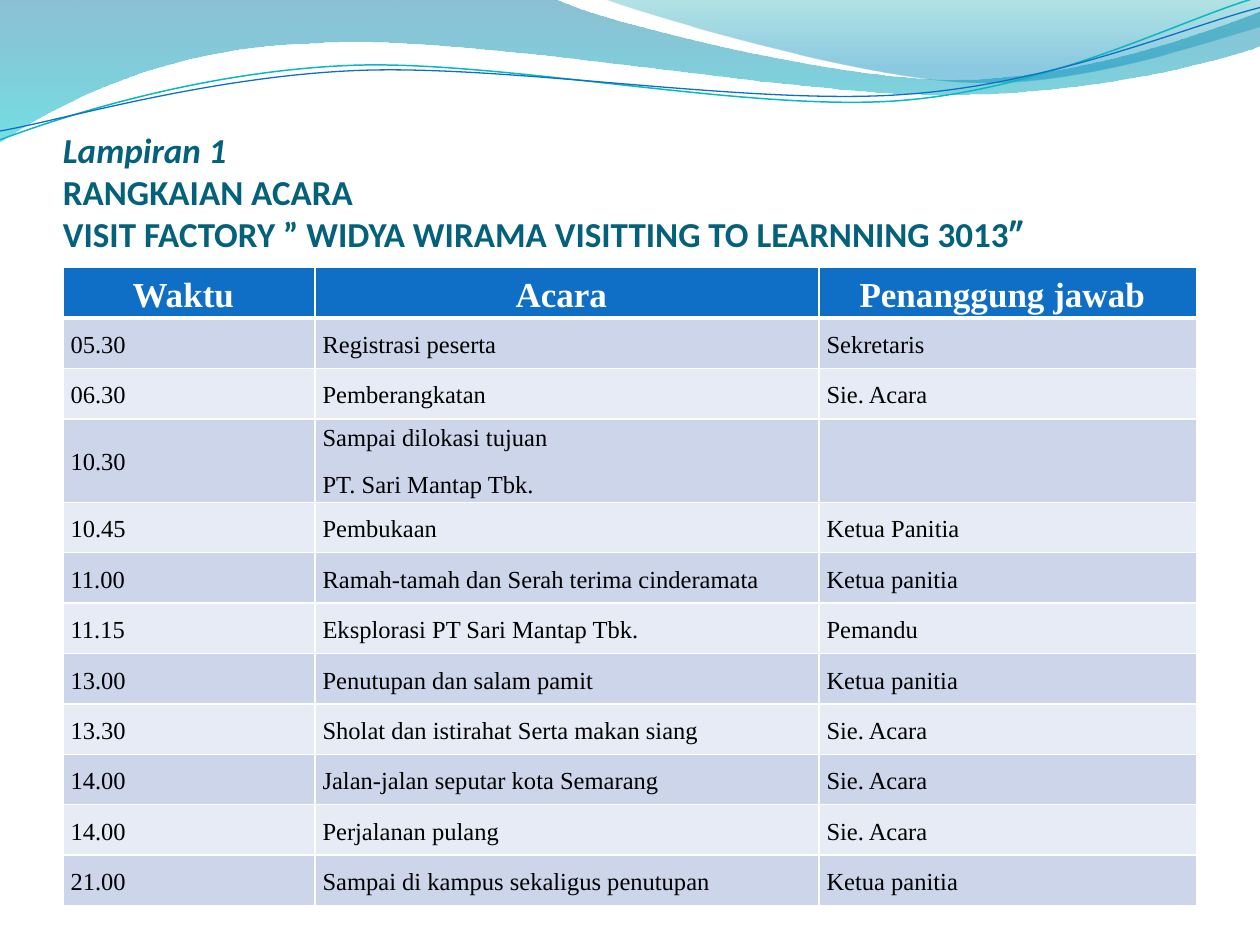
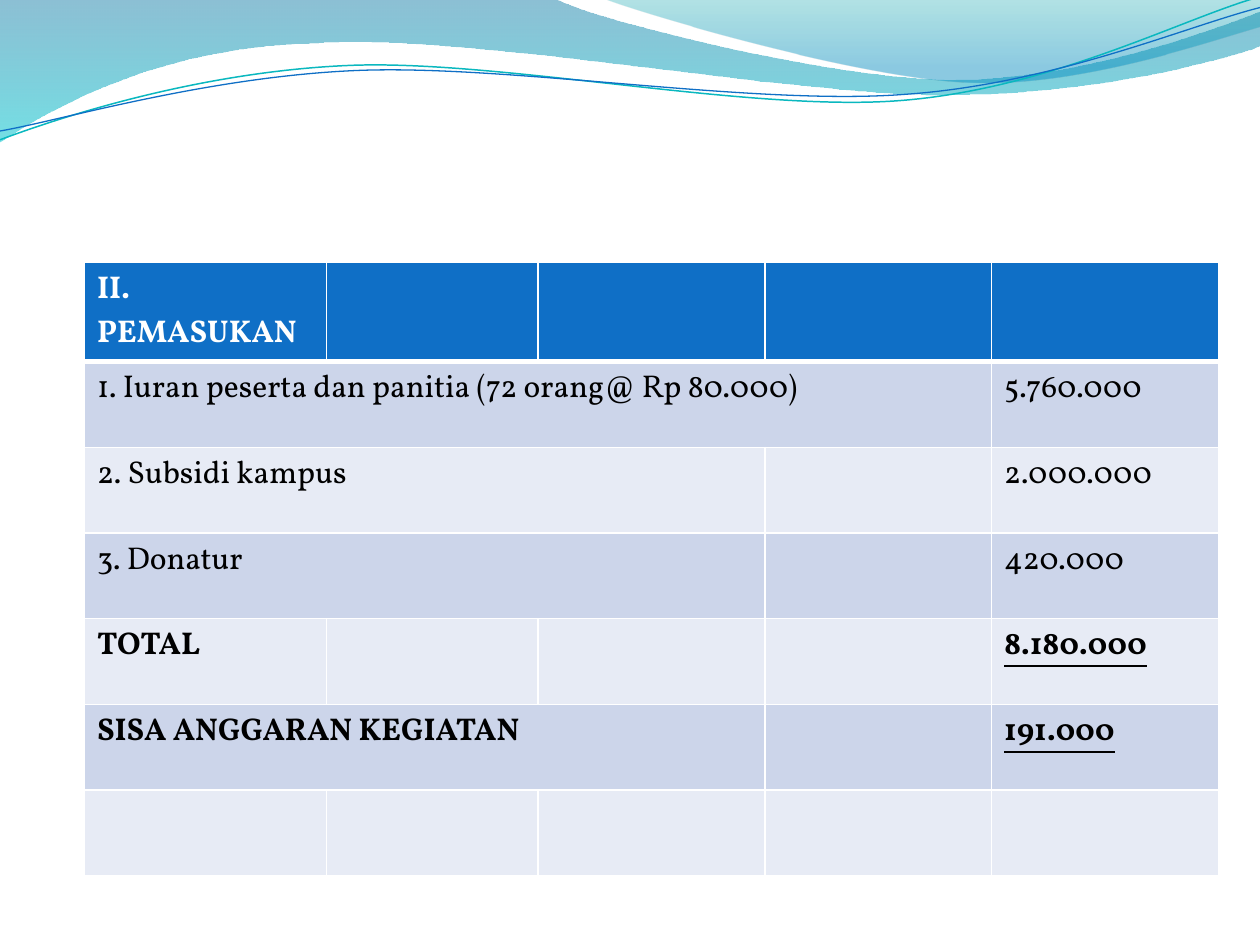
from dataclasses import dataclass

from lxml.etree import SubElement
from pptx import Presentation
from pptx.dml.color import RGBColor as RGB
from pptx.enum.text import MSO_ANCHOR as Anchor, PP_ALIGN as Align
from pptx.oxml import parse_xml
from pptx.oxml.ns import nsdecls, qn
from pptx.util import Inches, Pt


@dataclass(frozen=True)
class Theme:
    title: str = "04617B"
    header: str = "0F6FC6"
    bands: tuple = ("CCD5EA", "E7EBF5")
    white: str = "FFFFFF"
    black: str = "000000"
    wave_teal: str = "0AB8BF"
    title_font: str = "Calibri"
    schedule_font: str = "Times New Roman"
    income_font: str = "Vollkorn"
    title_size: int = 20
    schedule_size: int = 14
    income_size: int = 18
    grid: int = 1
    header_rule: int = 3


T = Theme()

# Each wave is a list of points (2 numbers) and Bézier curves (6 numbers).
# A gradient stop is position, colour, opacity in percent.
BANDS = [
    ([(0, 0), (4.4, -0.01), (4.76, 0.17, 6.64, 0.63, 7.58, 0.63),
      (8.53, 0.63, 9.58, 0.26, 10, 0.09), (10.01, 0.36),
      (9.83, 0.44, 8.7, 0.76, 7.46, 0.75), (6.22, 0.75, 3.82, 0.28, 2.57, 0.34),
      (1.29, 0.36, 0.46, 0.83, -0.01, 1.13)],
     [(0, "0074A1", 45), (1, "00C6CF", 55)]),
    ([(4.79, -0.01), (5.09, 0.11, 6.82, 0.62, 7.69, 0.65),
      (8.56, 0.69, 9.61, 0.32, 10, 0.21), (10, 0)],
     [(0, "00A1A9", 30), (0.8, "008BBF", 45)]),
]
STRANDS = [
    ([(0, 1.11), (0.48, 0.93, 1.58, 0.57, 2.77, 0.52),
      (3.95, 0.47, 5.93, 0.89, 7.13, 0.8), (8.33, 0.71, 9.38, 0.15, 9.98, -0.02)],
     T.wave_teal, 0.85),
    ([(0, 1.04), (0.47, 0.96, 1.64, 0.61, 2.83, 0.56),
      (4.03, 0.51, 5.97, 0.84, 7.17, 0.75), (8.36, 0.67, 9.41, 0.21, 10, 0.06)],
     T.header, 0.75),
]

TITLE = ("Lampiran 1\vRANGKAIAN ACARA\v"
         "VISIT FACTORY ” WIDYA WIRAMA VISITTING TO LEARNNING 3013″")

SCHEDULE = [
    ("Waktu", "Acara", "Penanggung jawab"),
    ("05.30", "Registrasi peserta", "Sekretaris"),
    ("06.30", "Pemberangkatan", "Sie. Acara"),
    ("10.30", "Sampai dilokasi tujuan\nPT. Sari Mantap Tbk.", ""),
    ("10.45", "Pembukaan", "Ketua Panitia"),
    ("11.00", "Ramah-tamah dan Serah terima cinderamata", "Ketua panitia"),
    ("11.15", "Eksplorasi PT Sari Mantap Tbk.", "Pemandu"),
    ("13.00", "Penutupan dan salam pamit", "Ketua panitia"),
    ("13.30", "Sholat dan istirahat Serta makan siang", "Sie. Acara"),
    ("14.00", "Jalan-jalan seputar kota Semarang", "Sie. Acara"),
    ("14.00", "Perjalanan pulang", "Sie. Acara"),
    ("21.00", "Sampai di kampus sekaligus penutupan", "Ketua panitia"),
]

# Label, columns it spans, amount, bold
INCOME = [
    ("II. PEMASUKAN", 1, "", True),
    ("1. Iuran peserta dan panitia (72 orang@ Rp 80.000)", 4, "5.760.000", False),
    ("2. Subsidi kampus", 3, "2.000.000", False),
    ("3. Donatur", 3, "420.000", False),
    ("TOTAL", 1, "8.180.000", True),
    ("SISA ANGGARAN KEGIATAN", 3, "191.000", True),
    ("", 1, "", False),
]


def style_font(font, name, size, color, bold=False):
    font.name, font.size, font.bold = name, Pt(size), bold
    font.color.rgb = RGB.from_string(color)


def add_wave(slide, wave, left, top, close):
    """Draw the wave through its end points, then bend the curved segments."""
    parts = [[(Inches(left + x), Inches(top + y)) for x, y in zip(part[::2], part[1::2])]
             for part in wave]
    ends = [part[-1] for part in parts]
    builder = slide.shapes.build_freeform(*ends[0])
    builder.add_line_segments(ends[1:], close=close)
    sp = builder.convert_to_shape()
    sp.shadow.inherit = False
    segments = list(sp._element.iter(qn("a:lnTo")))
    for segment, points in zip(segments, parts[1:]):
        if len(points) == 3:
            curve = parse_xml(f'<a:cubicBezTo {nsdecls("a")}/>')
            for x, y in points:
                SubElement(curve, qn("a:pt"), x=str(x - sp.left), y=str(y - sp.top))
            segment.getparent().replace(segment, curve)
    return sp


def add_waves(slide, left=0, top=0):
    for wave, stops in BANDS:
        sp = add_wave(slide, wave, left, top, close=True)
        sp.line.fill.background()
        sp.fill.gradient()
        sp.fill.gradient_angle = 270
        for stop, (position, color, _) in zip(sp.fill.gradient_stops, stops):
            stop.position = position
            stop.color.rgb = RGB.from_string(color)
        for clr, (_, _, opacity) in zip(sp._element.spPr.iter(qn("a:srgbClr")), stops):
            SubElement(clr, qn("a:alpha"), val=str(opacity * 1000))
    for wave, color, width in STRANDS:
        sp = add_wave(slide, wave, left, top, close=False)
        sp.fill.background()
        sp.line.color.rgb = RGB.from_string(color)
        sp.line.width = Pt(width)


def add_title(slide, left, top, width, height):
    box = slide.shapes.add_textbox(*map(Inches, (left, top, width, height)))
    tf = box.text_frame
    tf.word_wrap = True
    tf.vertical_anchor = Anchor.BOTTOM
    tf.margin_left = tf.margin_right = tf.margin_bottom = 0
    tf.margin_top = Inches(0.05)
    p = tf.paragraphs[0]
    p.text = TITLE
    for r in p.runs:
        style_font(r.font, T.title_font, T.title_size, T.title, bold=True)
    p.runs[0].font.italic = True


def set_borders(cell, row):
    """White grid, with a thicker rule under the header row."""
    widths = {"L": T.grid, "R": T.grid,
              "T": T.header_rule if row == 1 else T.grid,
              "B": T.header_rule if row == 0 else T.grid}
    tc_pr = cell._tc.get_or_add_tcPr()
    for i, (side, width) in enumerate(widths.items()):
        tc_pr.insert(i, parse_xml(
            f'<a:ln{side} {nsdecls("a")} w="{Pt(width)}"><a:solidFill>'
            f'<a:srgbClr val="{T.white}"/></a:solidFill></a:ln{side}>'))


def add_grid(slide, left, top, columns, heights):
    """Add an empty banded table."""
    frame = slide.shapes.add_table(
        len(heights), len(columns), Inches(left), Inches(top),
        Inches(sum(columns)), Inches(sum(heights)))
    table = frame.table
    for column, width in zip(table.columns, columns):
        column.width = Inches(width)
    for i, (row, height) in enumerate(zip(table.rows, heights)):
        row.height = Inches(height)
        for cell in row.cells:
            cell.fill.solid()
            color = T.bands[(i - 1) % 2] if i else T.header
            cell.fill.fore_color.rgb = RGB.from_string(color)
            set_borders(cell, i)
    return table


def add_schedule(slide, left, top, row_height):
    table = add_grid(slide, left, top, (2, 4, 3), [row_height] * len(SCHEDULE))
    for i, texts in enumerate(SCHEDULE):
        header = i == 0
        for cell, text in zip(table.rows[i].cells, texts):
            cell.vertical_anchor = Anchor.MIDDLE
            cell.margin_left = Inches(0.06)
            cell.margin_right = Inches(0.15 if header else 0.06)
            cell.margin_top = cell.margin_bottom = Inches(0.01)
            cell.text_frame.text = text
            for p in cell.text_frame.paragraphs:
                p.alignment = Align.CENTER if header else Align.LEFT
                p.line_spacing = 1.08 if "\n" in text else 1.15
                p.space_after = Pt(10)
                for r in p.runs:
                    style_font(r.font, T.schedule_font,
                               T.title_size if header else T.schedule_size,
                               T.white if header else T.black, header)


def add_income(slide, left, top, header_height, row_height):
    heights = [header_height] + [row_height] * (len(INCOME) - 1)
    table = add_grid(slide, left, top, (1.92, 1.68, 1.8, 1.8, 1.8), heights)
    for i, (label, span, amount, bold) in enumerate(INCOME):
        label_cell, amount_cell = table.cell(i, 0), table.cell(i, 4)
        if span > 1:
            label_cell.merge(table.cell(i, span - 1))
        for cell, text in ((label_cell, label), (amount_cell, amount)):
            p = cell.text_frame.paragraphs[0]
            p.text = text
            for r in p.runs:
                style_font(r.font, T.income_font, T.income_size,
                           T.black if i else T.white, bold)
                r.font.underline = bold and cell is amount_cell


def add_slide(prs):
    slide = prs.slides.add_slide(prs.slide_layouts[6])
    add_waves(slide)
    return slide


def main():
    prs = Presentation()
    prs.slide_width, prs.slide_height = Inches(10), Inches(7.5)

    slide = add_slide(prs)
    add_title(slide, 0.5, 0.77, 9, 1.25)
    add_schedule(slide, 0.5, 2.12, 0.4)

    add_income(add_slide(prs), 0.67, 2.08, 0.79, 0.68)

    prs.save("out.pptx")


if __name__ == "__main__":
    main()
